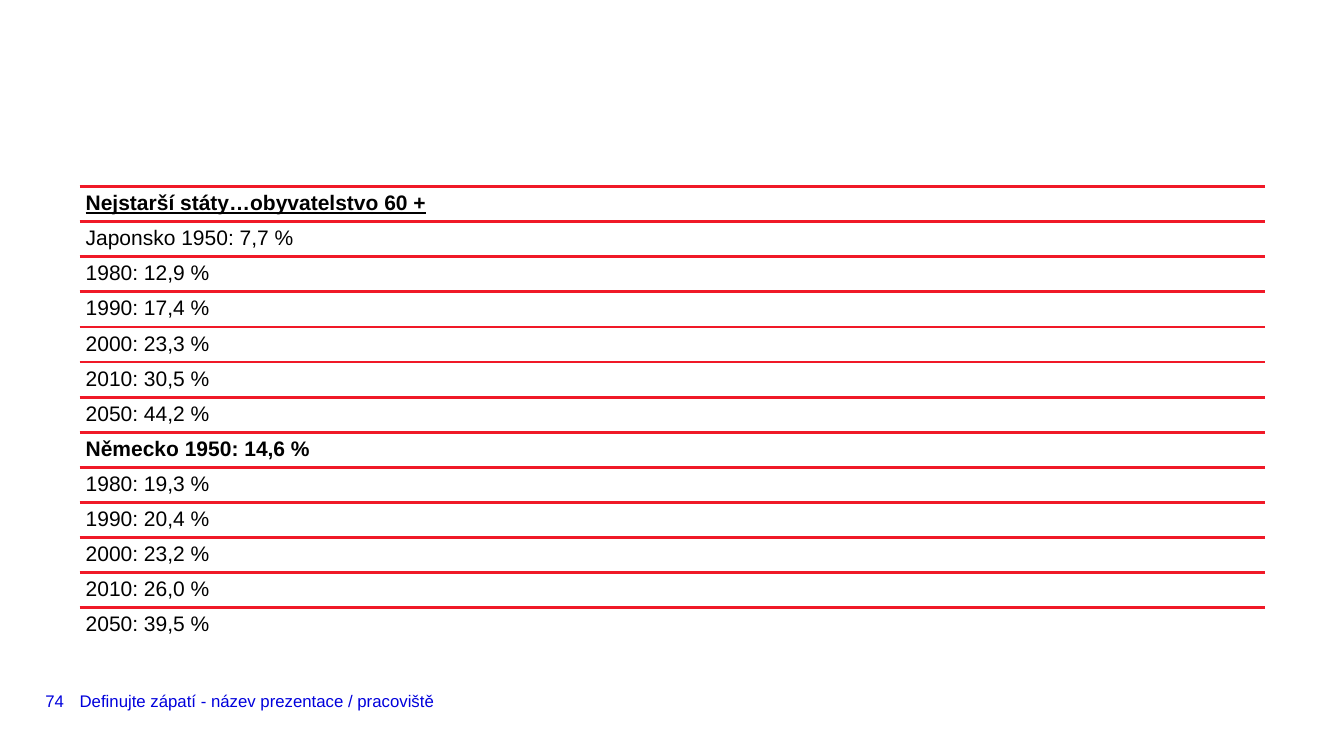
from dataclasses import dataclass

from lxml.etree import SubElement
from pptx import Presentation
from pptx.dml.color import RGBColor as RGB
from pptx.enum.shapes import MSO_CONNECTOR as LINK
from pptx.enum.text import MSO_ANCHOR as ANCHOR
from pptx.oxml.ns import qn
from pptx.util import Inches, Pt


@dataclass(frozen=True)
class Theme:
    """Colours, font and type sizes of the slide."""
    font: str = "Arial"
    ink: RGB = RGB(0x00, 0x00, 0x00)
    blue: RGB = RGB(0x00, 0x00, 0xDC)
    red: RGB = RGB(0xF0, 0x19, 0x28)
    body: Pt = Pt(15)
    foot: Pt = Pt(12)
    rule: Pt = Pt(2)


THEME = Theme()
LEFT, WIDTH = 0.79, 11.76
TOP, LAST = 1.85, 6.03
FOOT_TOP, FOOT_HIGH = 6.81, 0.28
TITLE = "Nejstarší státy…obyvatelstvo 60 +"
GERMANY = "Německo 1950: 14,6 %"
ROWS = [
    TITLE,
    "Japonsko 1950: 7,7 %",
    "1980: 12,9 %",
    "1990: 17,4 %",
    "2000: 23,3 %",
    "2010: 30,5 %",
    "2050: 44,2 %",
    GERMANY,
    "1980: 19,3 %",
    "1990: 20,4 %",
    "2000: 23,2 %",
    "2010: 26,0 %",
    "2050: 39,5 %",
]


def add_text(shapes, text, left, top, width, height, size, color, inset=0, wrap=True):
    """Add a one-paragraph text box and return its frame."""
    box = shapes.add_textbox(Inches(left), Inches(top), Inches(width), Inches(height))
    frame = box.text_frame
    frame.word_wrap = wrap
    frame.margin_left = frame.margin_right = Inches(inset)
    frame.margin_top = frame.margin_bottom = Inches(inset)
    para = frame.paragraphs[0]
    para.text = text
    para.font.name = THEME.font
    para.font.size = size
    para.font.color.rgb = color
    return frame


def add_rule(shapes, top):
    """Add a red rule across the list."""
    y = Inches(top)
    rule = shapes.add_connector(LINK.STRAIGHT, Inches(LEFT), y, Inches(LEFT + WIDTH), y)
    rule.line.color.rgb = THEME.red
    rule.line.width = THEME.rule
    SubElement(rule._element.spPr, qn("a:effectLst"))


def add_list(slide):
    """Add the ruled list of states and shares."""
    shapes = slide.shapes.add_group_shape().shapes
    pitch = (LAST - TOP) / (len(ROWS) - 1)
    for i, text in enumerate(ROWS):
        top = TOP + i * pitch
        add_rule(shapes, top)
        frame = add_text(shapes, text, LEFT, top, WIDTH, pitch,
                         THEME.body, THEME.ink, inset=0.06)
        para = frame.paragraphs[0]
        para.line_spacing = 0.9
        if text in (TITLE, GERMANY):
            para.font.bold = True
        if text == TITLE:
            para.font.underline = True


def add_foot(slide, text, left, width, wrap=True):
    """Add a blue footer text."""
    frame = add_text(slide.shapes, text, left, FOOT_TOP, width, FOOT_HIGH,
                     THEME.foot, THEME.blue, wrap=wrap)
    frame.vertical_anchor = ANCHOR.MIDDLE
    frame.paragraphs[0].space_after = Pt(6)


def main():
    """Build the slide and save it."""
    deck = Presentation()
    deck.slide_width, deck.slide_height = Inches(13.33), Inches(7.5)
    slide = deck.slides.add_slide(deck.slide_layouts[6])
    add_foot(slide, "Definujte zápatí - název prezentace / pracoviště", LEFT, 8.66)
    add_foot(slide, "74", 0.45, 0.28, wrap=False)
    add_list(slide)
    deck.save("out.pptx")


if __name__ == "__main__":
    main()
